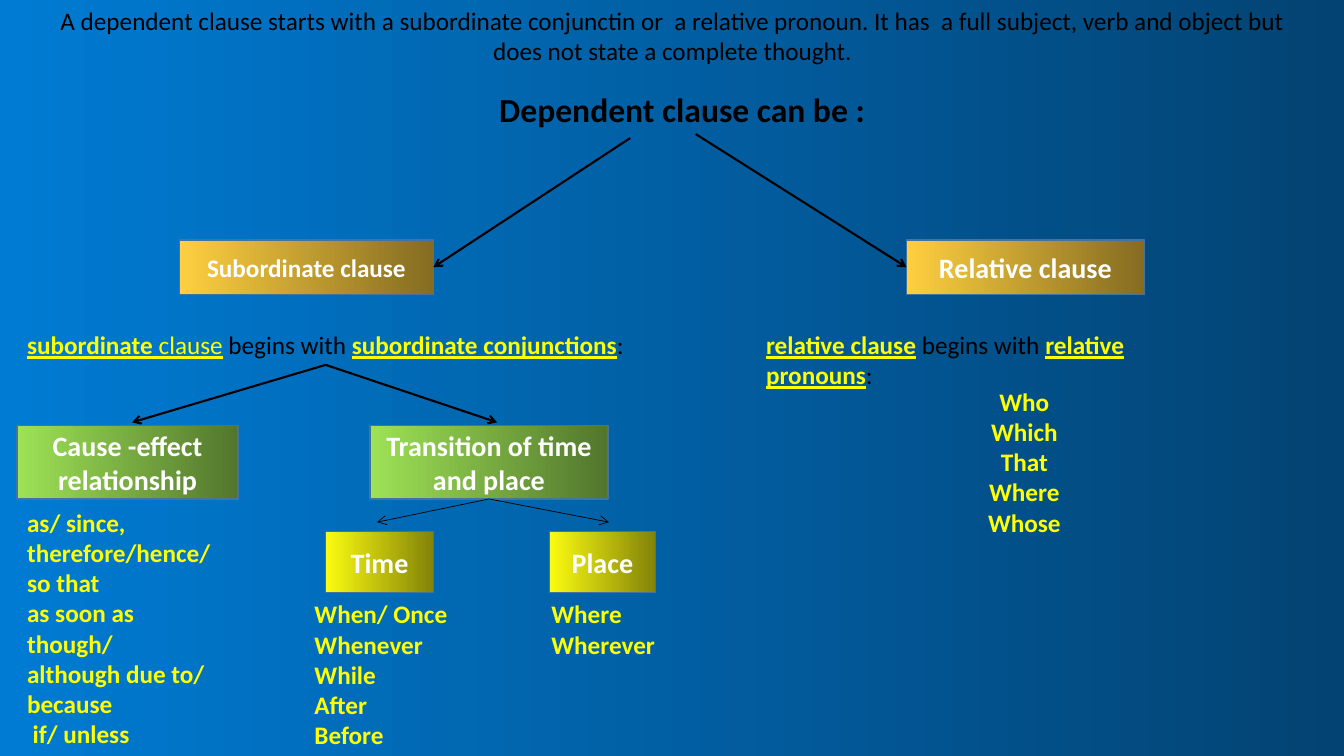
from lxml.etree import SubElement
from pptx import Presentation
from pptx.dml.color import RGBColor
from pptx.enum.shapes import MSO_CONNECTOR, MSO_SHAPE
from pptx.enum.text import MSO_ANCHOR, MSO_AUTO_SIZE, PP_ALIGN
from pptx.oxml.ns import qn
from pptx.util import Inches, Pt

HUES = {
    "back": ("007BD3", "034373"),
    "gold": ("FECF40", "846C21"),
    "green": ("9EE256", "52762D"),
    "lemon": ("FBFB11", "838309"),
    "edge": "43739E",
    "black": "000000",
    "white": "FFFFFF",
    "yellow": "FFFF00",
}


def rgb(name):
    return RGBColor.from_string(HUES[name])


class Board:
    font = "Calibri"

    def __init__(self, deck):
        self.slide = deck.slides.add_slide(deck.slide_layouts[5])
        self.shade(self.slide.background.fill, "back")

    def shade(self, fill, name):
        fill.gradient()
        fill.gradient_angle = 0
        for stop, code in zip(fill.gradient_stops, HUES[name]):
            stop.color.rgb = RGBColor.from_string(code)

    def style(self, run, size, hue, bold, under=False):
        run.font.name = self.font
        run.font.size = Pt(size)
        run.font.color.rgb = rgb(hue)
        run.font.bold = bold
        run.font.underline = under

    def label(self, frame, text, size, hue, bold, align):
        frame.text = text
        for para in frame.paragraphs:
            para.alignment = align
            for run in para.runs:
                self.style(run, size, hue, bold)

    def title(self, text, left, top, width, height):
        head = self.slide.shapes.title
        head.left, head.top = Inches(left), Inches(top)
        head.width, head.height = Inches(width), Inches(height)
        frame = head.text_frame
        frame.auto_size = MSO_AUTO_SIZE.NONE
        frame.vertical_anchor = MSO_ANCHOR.TOP
        frame.word_wrap = False
        self.label(frame, text, 24, "black", True, PP_ALIGN.CENTER)

    def box(self, text, hue, left, top, width, height, size=20):
        shape = self.slide.shapes.add_shape(
            MSO_SHAPE.RECTANGLE, Inches(left), Inches(top), Inches(width), Inches(height))
        shape.shadow.inherit = False
        self.shade(shape.fill, hue)
        shape.line.color.rgb = rgb("edge")
        shape.line.width = Pt(1)
        frame = shape.text_frame
        frame.word_wrap = True
        frame.vertical_anchor = MSO_ANCHOR.MIDDLE
        self.label(frame, text, size, "white", True, PP_ALIGN.CENTER)
        return shape

    def note(self, text, left, top, width, height, wrap=False,
             hue="yellow", bold=True, align=PP_ALIGN.LEFT):
        area = self.slide.shapes.add_textbox(
            Inches(left), Inches(top), Inches(width), Inches(height))
        frame = area.text_frame
        frame.word_wrap = wrap
        self.label(frame, text, 18, hue, bold, align)
        return frame

    def rule(self, parts, left, top, width, height):
        para = self.note("", left, top, width, height).paragraphs[0]
        for text, key, bold in parts:
            run = para.add_run()
            run.text = text
            self.style(run, 18, "yellow" if key else "black", bold, key)

    def arrow(self, start, end, width=1.5, source=None, target=None):
        line = self.slide.shapes.add_connector(
            MSO_CONNECTOR.STRAIGHT, *(Inches(n) for n in start + end))
        if source:
            line.begin_connect(*source)
        if target:
            line.end_connect(*target)
        line.line.color.rgb = rgb("black")
        line.line.width = Pt(width)
        props = line._element.spPr
        SubElement(props.find(qn("a:ln")), qn("a:tailEnd"), type="arrow")
        SubElement(props, qn("a:effectLst"))


def main():
    deck = Presentation()
    deck.slide_width, deck.slide_height = Inches(13.33), Inches(7.5)
    board = Board(deck)

    board.note("A dependent clause starts with a subordinate conjunctin or  a relative pronoun. "
               "It has  a full subject, verb and object but does not state a complete thought.",
               0.33, 0, 12.68, 0.71, True, "black", False, PP_ALIGN.CENTER)
    board.title("Dependent clause can be :", 4.82, 0.83, 3.89, 0.5)

    sub = board.box("Subordinate clause", "gold", 1.78, 2.38, 2.52, 0.54, 18)
    rel = board.box("Relative clause", "gold", 8.99, 2.38, 2.36, 0.54)
    board.box("Cause -effect relationship", "green", 0.17, 4.22, 2.19, 0.73)
    shift = board.box("Transition of time and place", "green", 3.67, 4.22, 2.36, 0.73)
    board.box("Time", "lemon", 3.23, 5.27, 1.07, 0.61)
    board.box("Place", "lemon", 5.45, 5.27, 1.05, 0.61)

    board.rule([("subordinate", True, True), (" clause", True, False),
                (" begins with ", False, False),
                ("subordinate conjunctions", True, True), (":", False, False)],
               0.17, 3.22, 6.12, 0.4)
    board.rule([("relative clause", True, True), (" begins with ", False, False),
                ("relative pronouns", True, True), (":", False, False)],
               7.5, 3.22, 4.86, 0.4)

    board.note("as/ since, therefore/hence/\nso that\n"
               "as soon as though/ although due to/ because\n if/ unless",
               0.17, 4.98, 2.02, 2.52, True)
    board.note("When/ Once\nWhenever\nWhile\nAfter\nBefore", 3.02, 5.89, 1.52, 1.61)
    board.note("Where\nWherever", 5.37, 5.89, 1.23, 0.71)
    board.note("Who\nWhich\nThat\nWhere\nWhose", 9.28, 3.78, 1.76, 1.61, True,
               align=PP_ALIGN.CENTER)

    board.arrow((6.25, 1.37), (4.3, 2.65), target=(sub, 3))
    board.arrow((6.9, 1.33), (8.99, 2.65), target=(rel, 1))
    for tip in (1.31, 4.93):
        board.arrow((3.23, 3.62), (tip, 4.19))
    for tip in (3.74, 6.04):
        board.arrow((4.85, 4.95), (tip, 5.18), 0.5, source=(shift, 2))

    deck.save("out.pptx")


if __name__ == "__main__":
    main()
